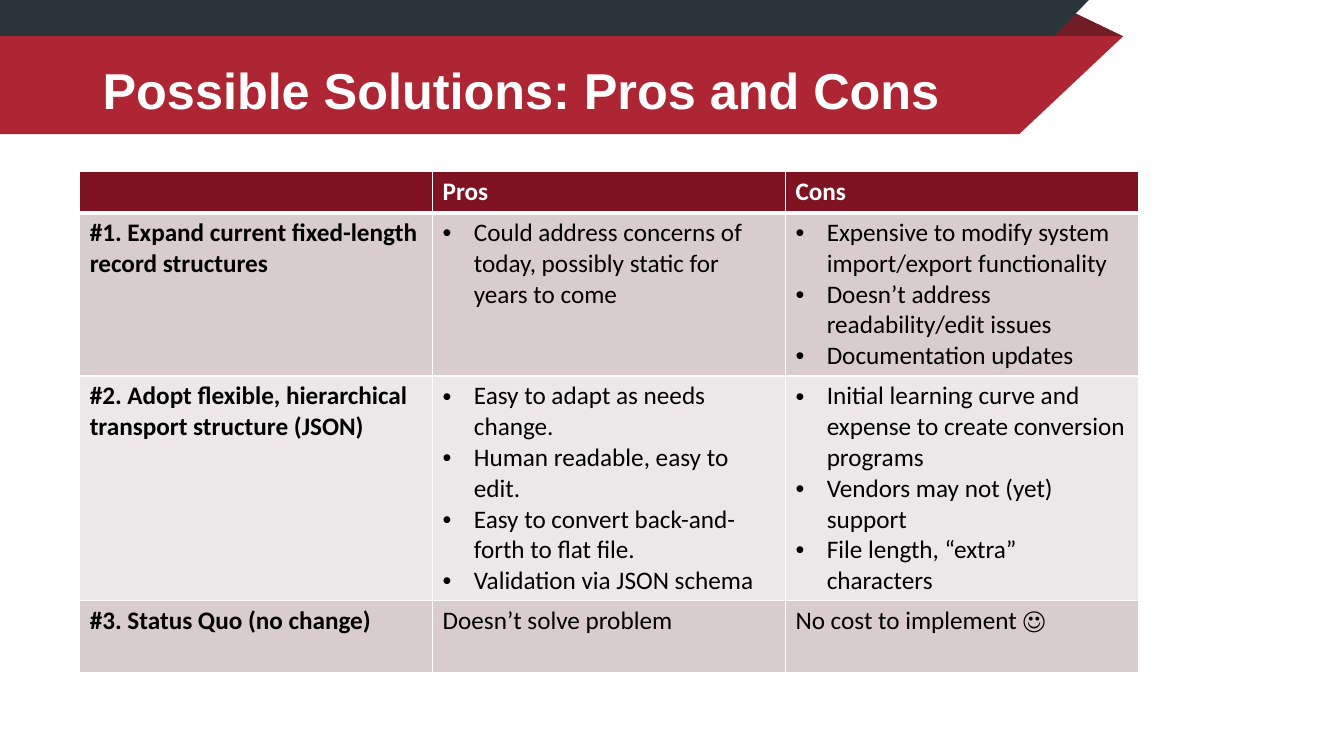
from lxml import etree
from pptx import Presentation
from pptx import util as u
from pptx.dml.color import RGBColor
from pptx.enum import shapes, text
from pptx.oxml import ns

HUES = {"dark": "29353B", "red": "AE2533", "fold": "711D26", "head": "7F1322",
        "odd": "D8CCCD", "even": "ECE7E8", "white": "FFFFFF", "black": "000000"}

ROWS = [
    ("", ["Pros"], ["Cons"]),
    ("#1. Expand current fixed-length record structures",
     ["Could address concerns of today, possibly static for years to come"],
     ["Expensive to modify system import/export functionality",
      "Doesn’t address readability/edit issues",
      "Documentation updates"]),
    ("#2. Adopt flexible, hierarchical transport structure (JSON)",
     ["Easy to adapt as needs change.",
      "Human readable, easy to edit.",
      "Easy to convert back-and-forth to flat file.",
      "Validation via JSON schema"],
     ["Initial learning curve and expense to create conversion programs",
      "Vendors may not (yet) support",
      "File length, “extra” characters"]),
    ("#3. Status Quo (no change)",
     ["Doesn’t solve problem"], ["No cost to implement ☺"]),
]
HIGHS = [0.41, 1.62, 2.23, 0.71]
LISTS = (1, 2)


class Deck:
    """Holds the style and the current slide, and draws each kind of element."""

    def __init__(self, hues):
        self.hues = hues
        self.prs = Presentation()
        self.prs.slide_width = u.Inches(13.33)
        self.prs.slide_height = u.Inches(7.5)
        self.slide = self.prs.slides.add_slide(self.prs.slide_layouts[6])

    def tint(self, name):
        return RGBColor.from_string(self.hues[name])

    def paint(self, item, hue):
        item.fill.solid()
        item.fill.fore_color.rgb = self.tint(hue)

    def plain(self, shape, hue):
        self.paint(shape, hue)
        shape.line.fill.background()
        shape.shadow.inherit = False

    def fold(self, x, y, w, h, peak, hue):
        shape = self.slide.shapes.add_shape(
            shapes.MSO_SHAPE.ISOSCELES_TRIANGLE, *map(u.Inches, (x, y, w, h)))
        shape.adjustments[0] = peak
        self.plain(shape, hue)

    def band(self, top, base, wide, slim, hue):
        pts = [(u.Inches(x), u.Inches(y)) for x, y in
               ((0, top), (wide, top), (slim, base), (0, base))]
        form = self.slide.shapes.build_freeform(*pts[0])
        form.add_line_segments(pts[1:], close=True)
        self.plain(form.convert_to_shape(), hue)

    def font(self, para, face, size, hue, bold):
        for run in para.runs:
            run.font.name = face
            run.font.size = u.Pt(size)
            run.font.bold = bold
            run.font.color.rgb = self.tint(hue)

    def title(self, words, x, y, w, h):
        box = self.slide.shapes.add_textbox(*map(u.Inches, (x, y, w, h)))
        frame = box.text_frame
        frame.word_wrap = True
        frame.vertical_anchor = text.MSO_ANCHOR.MIDDLE
        frame.text = words
        frame.paragraphs[0].line_spacing = 0.9
        self.font(frame.paragraphs[0], "Arial", 36, "white", True)

    def bullet(self, para):
        props = para._p.get_or_add_pPr()
        props.set("marL", str(u.Inches(0.31)))
        props.set("indent", str(-u.Inches(0.31)))
        etree.SubElement(props, ns.qn("a:buFont"), typeface="Arial")
        etree.SubElement(props, ns.qn("a:buChar"), char="•")

    def edges(self, cell, row):
        props = cell._tc.get_or_add_tcPr()
        for side in "LRTB":
            thick = (row, side) in ((0, "B"), (1, "T"))
            line = etree.SubElement(props, ns.qn("a:ln" + side),
                                    w=str(u.Pt(3 if thick else 1)))
            fill = etree.SubElement(line, ns.qn("a:solidFill"))
            etree.SubElement(fill, ns.qn("a:srgbClr"), val=self.hues["white"])

    def cell(self, cell, row, col, lines):
        self.edges(cell, row)
        self.paint(cell, "head" if row == 0 else "odd" if row % 2 else "even")
        frame = cell.text_frame
        frame.text = "\n".join(lines)
        for para in frame.paragraphs:
            if row in LISTS and col:
                self.bullet(para)
            self.font(para, "Calibri", 18, "black" if row else "white",
                      row == 0 or col == 0)

    def table(self, rows, highs, x, y, w):
        grid = self.slide.shapes.add_table(
            len(rows), len(rows[0]),
            *map(u.Inches, (x, y, w, sum(highs)))).table
        for r, (name, pros, cons) in enumerate(rows):
            grid.rows[r].height = u.Inches(highs[r])
            for c, lines in enumerate(([name], pros, cons)):
                self.cell(grid.cell(r, c), r, c, lines)


def main():
    deck = Deck(HUES)
    deck.fold(10.04, 0, 1.1, 0.36, 0.32, "fold")
    deck.band(0, 0.66, 10.8, 10.16, "dark")
    deck.band(0.36, 1.33, 11.14, 10.11, "red")
    deck.title("Possible Solutions: Pros and Cons", 0.92, 0.2, 11.5, 1.45)
    deck.table(ROWS, HIGHS, 0.79, 1.7, 10.5)
    deck.prs.save("out.pptx")


if __name__ == "__main__":
    main()
